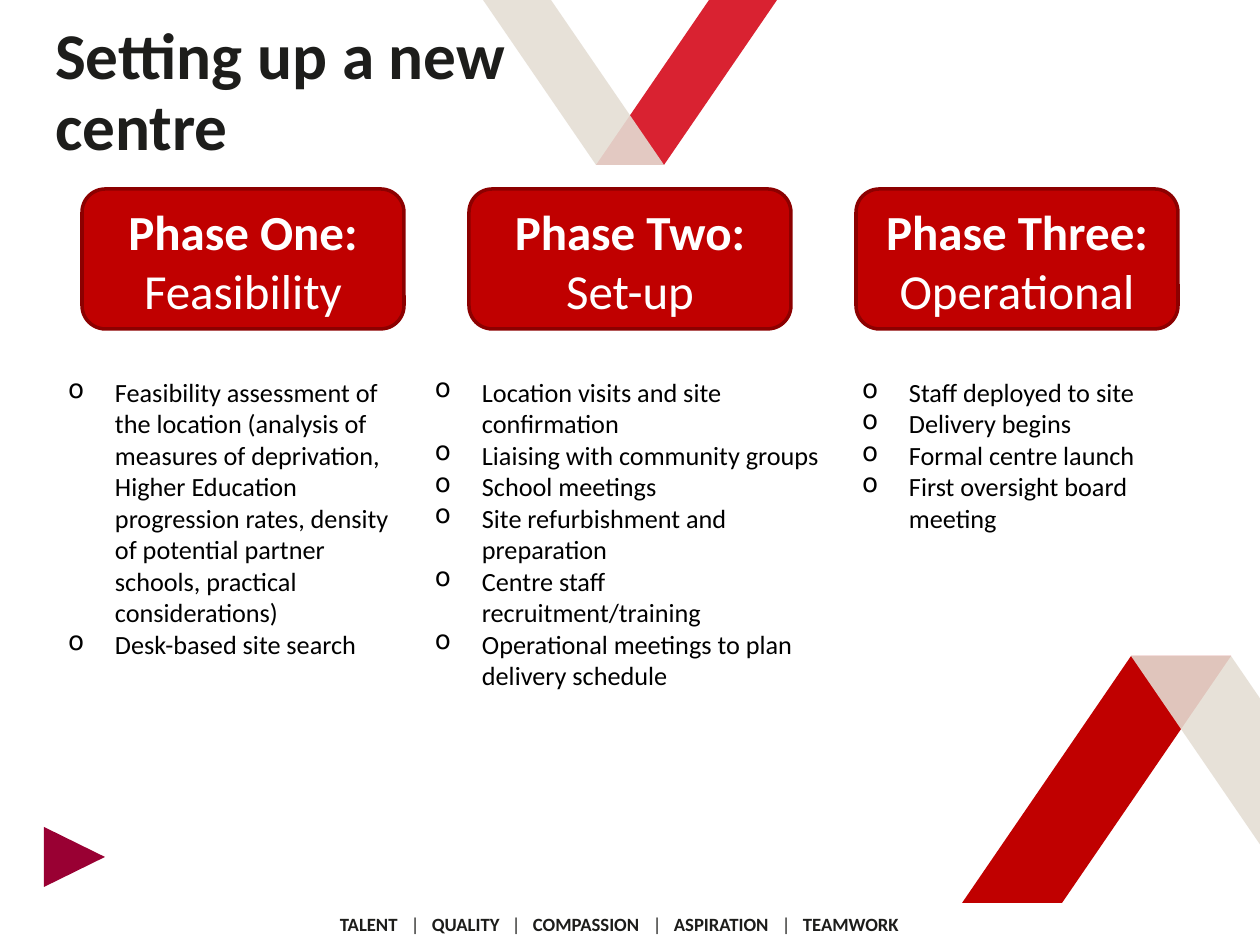
import pptx
import pptx.dml.color
import pptx.enum.shapes
import pptx.enum.text
import pptx.oxml
import pptx.util
from lxml import etree

PX = 914400 / 126
FONT = "Calibri"
RED, BEIGE, WHITE, INK = "C00000", "E5DED4", "FFFFFF", "1D1D1B"
DRAWING = "http://schemas.openxmlformats.org/drawingml/2006/main"
ALIGN = pptx.enum.text.PP_ALIGN
ANCHOR = pptx.enum.text.MSO_ANCHOR

PHASES = [
    ("Phase One:", "Feasibility"),
    ("Phase Two:", "Set-up"),
    ("Phase Three:", "Operational"),
]
TASK_LISTS = [
    (55, 349, 299, [
        "Feasibility assessment of the location (analysis of measures of "
        "deprivation, Higher Education progression rates, density of potential "
        "partner schools, practical considerations)",
        "Desk-based site search",
    ]),
    (422, 417, 363, [
        "Location visits and site confirmation",
        "Liaising with community groups",
        "School meetings",
        "Site refurbishment and preparation",
        "Centre staff recruitment/training",
        "Operational meetings to plan delivery schedule",
    ]),
    (849, 335, 171, [
        "Staff deployed to site",
        "Delivery begins",
        "Formal centre launch",
        "First oversight board meeting",
    ]),
]
VALUES = ["TALENT", "QUALITY", "COMPASSION", "ASPIRATION", "TEAMWORK"]
VALUES_LEFT = 340
VALUE_TABS = [411, 432, 512, 533, 653, 674, 782, 803]


def px(length):
    return pptx.util.Emu(round(length * PX))


def rgb(value):
    return pptx.dml.color.RGBColor.from_string(value)


def paint(shape, fill=None, line=None, line_width=0.75):
    shape.shadow.inherit = False
    if fill:
        shape.fill.solid()
        shape.fill.fore_color.rgb = rgb(fill)
    else:
        shape.fill.background()
    if line:
        shape.line.color.rgb = rgb(line)
        shape.line.width = pptx.util.Pt(line_width)
    else:
        shape.line.fill.background()


def set_alpha(shape, percent):
    color = shape._element.spPr.find(f".//{{{DRAWING}}}srgbClr")
    etree.SubElement(color, f"{{{DRAWING}}}alpha", val=str(percent * 1000))


def style(run, size, color, bold=False):
    run.font.name = FONT
    run.font.size = pptx.util.Pt(size)
    run.font.color.rgb = rgb(color)
    run.font.bold = bold


def prepare_frame(shape, anchor, side=0, top=0):
    frame = shape.text_frame
    frame.word_wrap = True
    frame.vertical_anchor = anchor
    frame.margin_left = frame.margin_right = px(side)
    frame.margin_top = frame.margin_bottom = px(top)
    return frame


def add_properties(paragraph, *fragments):
    """Append XML elements to the paragraph properties, in schema order."""
    properties = paragraph._p.get_or_add_pPr()
    for fragment in fragments:
        head, rest = fragment.split(" ", 1) if " " in fragment else (fragment, "")
        xml = f'{head} xmlns:a="{DRAWING}" {rest}'
        properties.append(pptx.oxml.parse_xml(xml))
    return properties


def add_box(slide, kind, left, top, width, height):
    return slide.shapes.add_shape(kind, px(left), px(top), px(width), px(height))


def add_phase(slide, left, name, stage):
    kind = pptx.enum.shapes.MSO_SHAPE.ROUNDED_RECTANGLE
    shape = add_box(slide, kind, left, 189, 322, 140)
    paint(shape, RED, "8C0000", 2)
    frame = prepare_frame(shape, ANCHOR.TOP, 13, 6)
    frame.text = f"{name}\n{stage}"
    for paragraph, bold in zip(frame.paragraphs, (True, False)):
        paragraph.alignment = ALIGN.CENTER
        style(paragraph.runs[0], 28, WHITE, bold)


def add_task_list(slide, left, width, height, tasks):
    kind = pptx.enum.shapes.MSO_SHAPE.RECTANGLE
    shape = add_box(slide, kind, left, 370, width, height)
    paint(shape, line=WHITE)
    frame = prepare_frame(shape, ANCHOR.TOP, 13, 6)
    frame.auto_size = pptx.enum.text.MSO_AUTO_SIZE.SHAPE_TO_FIT_TEXT
    frame.text = "\n".join(tasks)
    for paragraph in frame.paragraphs:
        properties = add_properties(
            paragraph,
            '<a:buClr ><a:srgbClr val="000000"/></a:buClr>',
            '<a:buChar char="o"/>',
        )
        properties.set("marL", str(px(47)))
        properties.set("indent", str(-px(47)))
        paragraph.alignment = ALIGN.LEFT
        style(paragraph.runs[0], 15, "000000")


def add_title(slide, text):
    shape = slide.shapes.add_textbox(px(55), px(60), px(509), px(68))
    frame = prepare_frame(shape, ANCHOR.MIDDLE)
    frame.text = text
    paragraph = frame.paragraphs[0]
    paragraph.line_spacing = 0.9
    style(paragraph.runs[0], 37.3, INK, True)


def add_polygon(slide, points, fill):
    builder = slide.shapes.build_freeform(*points[0], scale=PX)
    builder.add_line_segments(points[1:], close=True)
    shape = builder.convert_to_shape()
    paint(shape, fill)
    return shape


def add_chevron(slide, left, right, tip, end, red_shift, red):
    """Two slanted bands that meet at the tip, the beige one see-through."""
    for shift, fill in ((red_shift, red), (-red_shift, BEIGE)):
        points = [(left, tip), (right, tip), (right + shift, end), (left + shift, end)]
        band = add_polygon(slide, points, fill)
    set_alpha(band, 89)


def add_values_footer(slide):
    kind = pptx.enum.shapes.MSO_SHAPE.RECTANGLE
    shape = add_box(slide, kind, 0, 905, 1260, 40)
    paint(shape, WHITE)
    frame = prepare_frame(shape, ANCHOR.MIDDLE, 16, 9)
    frame.margin_left = px(VALUES_LEFT)
    paragraph = frame.paragraphs[0]
    stops = "".join(
        f'<a:tab pos="{px(stop - VALUES_LEFT)}" algn="l"/>' for stop in VALUE_TABS
    )
    add_properties(paragraph, f"<a:tabLst >{stops}</a:tabLst>")
    paragraph.alignment = ALIGN.LEFT
    paragraph.line_spacing = 0.9
    for index, value in enumerate(VALUES):
        if index:
            separator = paragraph.add_run()
            separator.text = "\t|\t"
            style(separator, 10.7, INK)
        run = paragraph.add_run()
        run.text = value
        style(run, 10.7, INK, True)


def main():
    presentation = pptx.Presentation()
    presentation.slide_width = px(1260)
    presentation.slide_height = px(945)
    slide = presentation.slides.add_slide(presentation.slide_layouts[6])
    for index, (name, stage) in enumerate(PHASES):
        add_phase(slide, 82 + 387 * index, name, stage)
    for task_list in TASK_LISTS:
        add_task_list(slide, *task_list)
    add_title(slide, "Setting up a new centre")
    add_chevron(slide, 596, 664, 165, 0, 113, "D92231")
    add_polygon(slide, [(44, 827), (105, 857), (44, 887)], "990033")
    add_chevron(slide, 1131, 1231, 656, 903, -169, RED)
    add_values_footer(slide)
    presentation.save("out.pptx")


if __name__ == "__main__":
    main()
